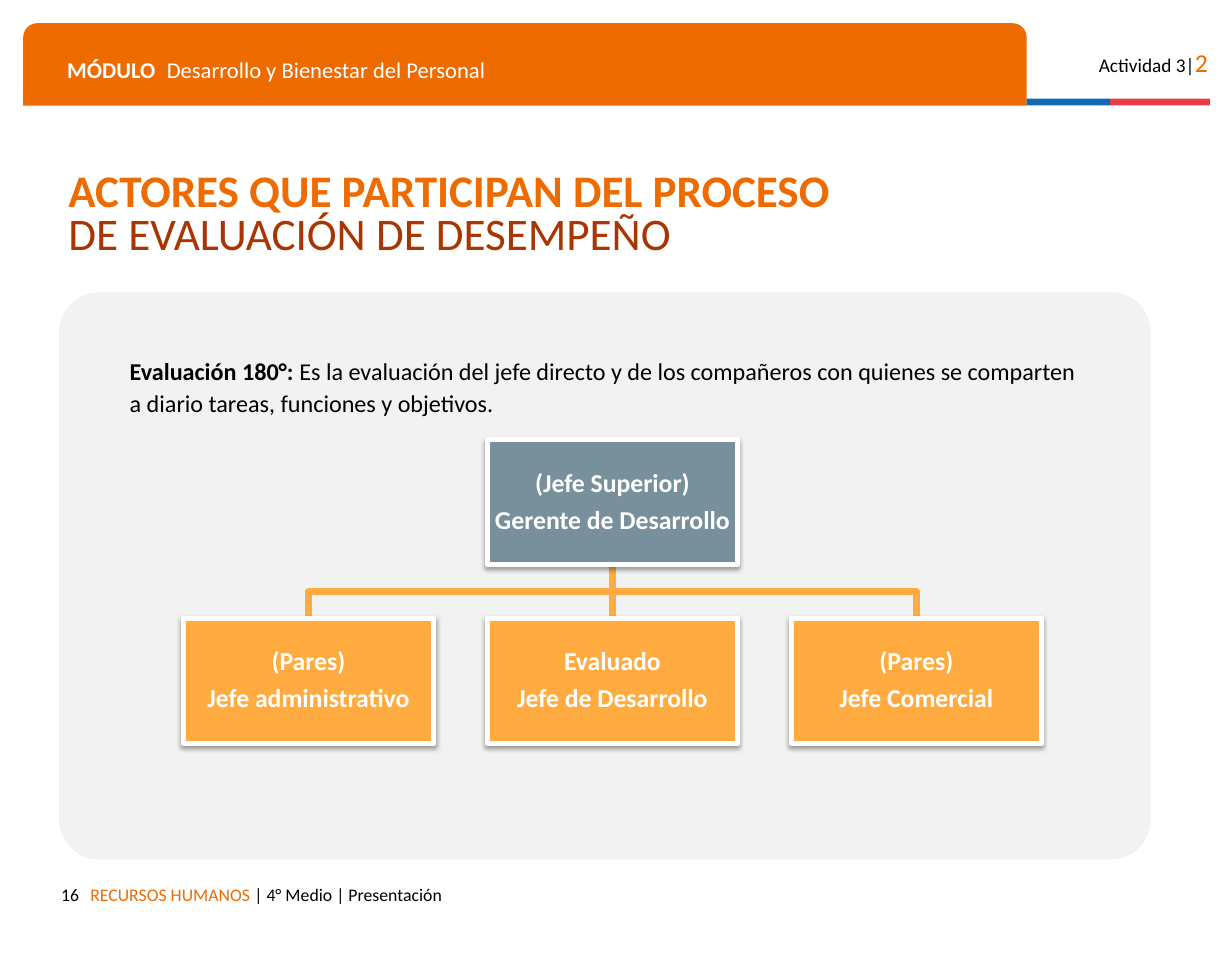
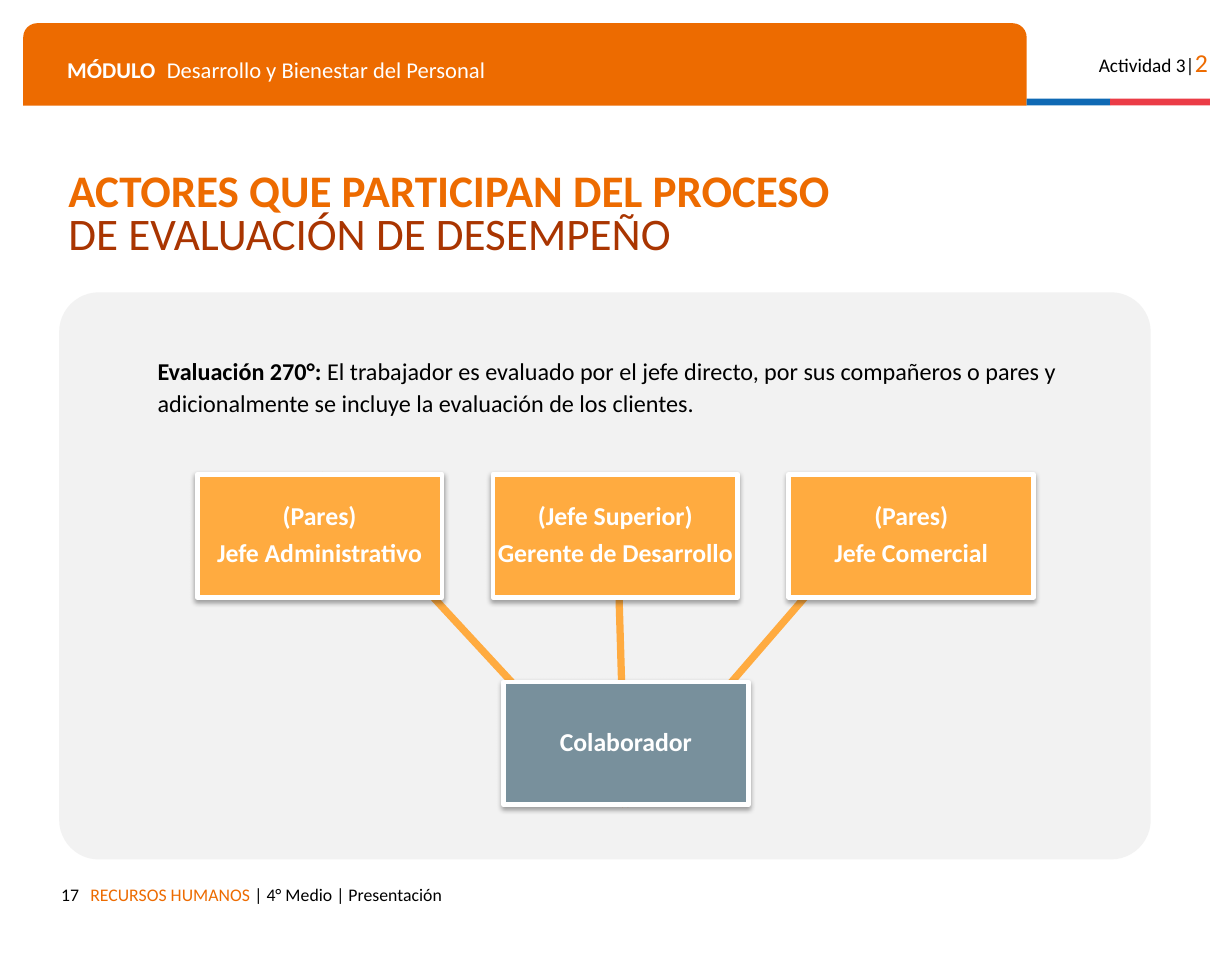
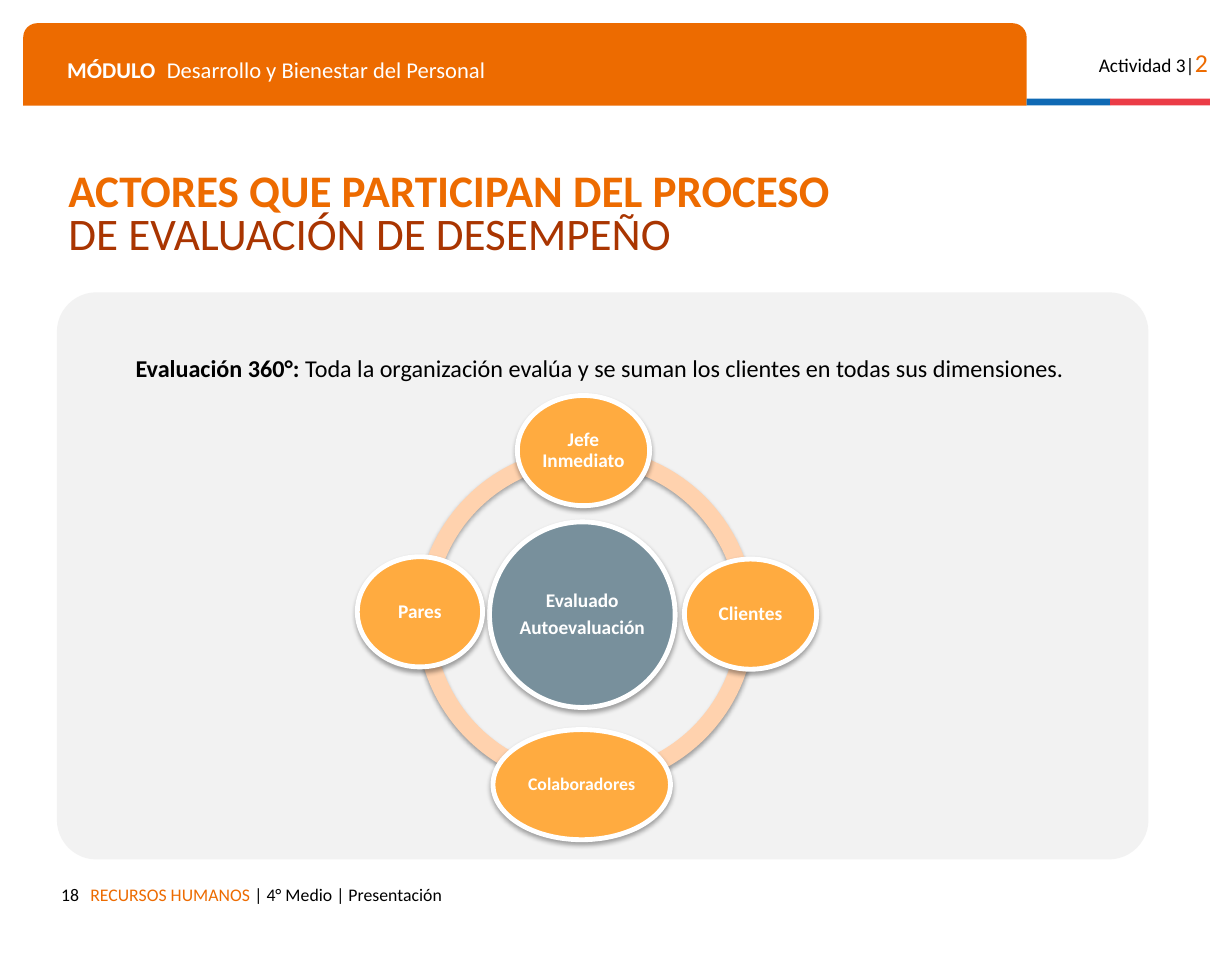
"""Build three slides on the actors of performance evaluation."""
from lxml import etree
from pptx import Presentation
from pptx.dml.color import RGBColor
from pptx.enum.shapes import MSO_CONNECTOR, MSO_SHAPE as SHAPE
from pptx.enum.text import MSO_ANCHOR as ANCHOR, MSO_AUTO_SIZE, PP_ALIGN as ALIGN
from pptx.oxml import parse_xml
from pptx.oxml.ns import nsdecls, qn
from pptx.util import Inches, Pt

ORANGE = RGBColor(0xED, 0x6B, 0x00)
RUST = RGBColor(0xA9, 0x35, 0x01)
BLUE = RGBColor(0x0F, 0x69, 0xB4)
RED = RGBColor(0xEB, 0x3C, 0x46)
GRAY = RGBColor(0xF2, 0xF2, 0xF2)
AMBER = RGBColor(0xFF, 0xAB, 0x40)
PEACH = RGBColor(0xFF, 0xD2, 0xAE)
SLATE = RGBColor(0x78, 0x90, 0x9C)
BLACK = RGBColor(0x00, 0x00, 0x00)
WHITE = RGBColor(0xFF, 0xFF, 0xFF)

SHADOW = (
    f'<a:effectLst {nsdecls("a")}><a:outerShdw blurRad="38100" dist="22860" dir="5400000"'
    ' rotWithShape="0"><a:srgbClr val="000000"><a:alpha val="35000"/></a:srgbClr>'
    "</a:outerShdw></a:effectLst>"
)
LABEL = {"alignment": ALIGN.CENTER, "line_spacing": 0.9}


def write_text(shape, paragraphs, paragraph_format, margin=0.1, anchor=ANCHOR.TOP, gap=0, grow=True):
    """Fill a shape with paragraphs, each a list of (text, size, colour, bold) runs."""
    frame = shape.text_frame
    frame_format = {
        "word_wrap": True,
        "vertical_anchor": anchor,
        "auto_size": MSO_AUTO_SIZE.SHAPE_TO_FIT_TEXT if grow else MSO_AUTO_SIZE.NONE,
    }
    for side in ("left", "top", "right", "bottom"):
        frame_format[f"margin_{side}"] = Inches(margin)
    for name, value in frame_format.items():
        setattr(frame, name, value)
    for index, runs in enumerate(paragraphs):
        paragraph = frame.add_paragraph() if index else frame.paragraphs[0]
        paragraph.space_before = Pt(gap if index else 0)
        for name, value in paragraph_format.items():
            setattr(paragraph, name, value)
        for text, size, color, bold in runs:
            run = paragraph.add_run()
            run.text = text
            run.font.color.rgb = color
            for name, value in {"name": "Calibri", "size": Pt(size), "bold": bold}.items():
                setattr(run.font, name, value)


def add_block(slide, kind, box, fill, adjustments=(), lines=(), size=16, gap=5.6, outlined=False, shadow=False):
    """Add a filled preset shape with optional centred label, white outline and shadow."""
    shape = slide.shapes.add_shape(kind, *map(Inches, box))
    shape.shadow.inherit = False
    shape.fill.solid()
    shape.fill.fore_color.rgb = fill
    for index, value in enumerate(adjustments):
        shape.adjustments[index] = value
    if outlined:
        shape.line.color.rgb = WHITE
        shape.line.width = Pt(3)
    else:
        shape.line.fill.background()
    if shadow:
        properties = shape.element.spPr
        properties.replace(properties.find(qn("a:effectLst")), parse_xml(SHADOW))
    if lines:
        runs = [[(line, size, WHITE, True)] for line in lines]
        write_text(shape, runs, LABEL, 0.01, ANCHOR.MIDDLE, gap, grow=False)
    return shape


presentation = Presentation()
presentation.slide_width = Inches(10.62)
presentation.slide_height = Inches(8.26)
layout = presentation.slide_layouts[5]
for placeholder in list(layout.placeholders):
    if placeholder.placeholder_format.idx:
        layout.shapes.element.remove(placeholder.element)
slides = [presentation.slides.add_slide(layout) for _ in range(3)]

shared_shapes = [
    add_block(slides[0], SHAPE.ROUND_2_SAME_RECTANGLE, (0.2, 0.2, 8.65, 0.71), ORANGE, (0.17, 0)),
    add_block(slides[0], SHAPE.RECTANGLE, (8.85, 0.85, 0.72, 0.06), BLUE),
    add_block(slides[0], SHAPE.RECTANGLE, (9.57, 0.85, 0.86, 0.06), RED),
]
shared_texts = [
    ((0.68, 7.53, 7.15, 0.35), ALIGN.LEFT,
     [("RECURSOS HUMANOS ", 11, ORANGE, False), ("| 4° Medio | Presentación", 11, BLACK, False)]),
    ((0.48, 0.38, 8.14, 0.41), ALIGN.LEFT,
     [("MÓDULO", 14, WHITE, True), ("\tDesarrollo y Bienestar del Personal", 14, WHITE, False)]),
    ((9.23, 0.3, 1.28, 0.43), ALIGN.RIGHT,
     [("Actividad 3|", 12, BLACK, False), ("2", 16, ORANGE, False)]),
]
for box, alignment, runs in shared_texts:
    text_box = slides[0].shapes.add_textbox(*map(Inches, box))
    write_text(text_box, [runs], {"alignment": alignment})
    if any("\t" in run[0] for run in runs):
        properties = text_box.text_frame.paragraphs[0]._p.get_or_add_pPr()
        tabs = etree.SubElement(properties, qn("a:tabLst"))
        etree.SubElement(tabs, qn("a:tab"), pos=str(Inches(0.86)), algn="l")
    shared_shapes.append(text_box)
for shape in shared_shapes:
    layout.shapes.element.append(shape.element)

definitions = [
    (0.51, (1.02, 2.95, 8.4, 0.74), "Evaluación 180°: ",
     "Es la evaluación del jefe directo y de los compañeros con quienes se comparten "
     "a diario tareas, funciones y objetivos."),
    (0.51, (1.26, 2.94, 9.21, 0.76), "Evaluación 270°: ",
     "El trabajador es evaluado por el jefe directo, por sus compañeros o pares y "
     "adicionalmente se incluye la evaluación de los clientes."),
    (0.49, (1.07, 2.92, 9.21, 0.48), "Evaluación 360°: ",
     "Toda la organización evalúa y se suman los clientes en todas sus dimensiones."),
]
title_lines = [
    [("ACTORES QUE PARTICIPAN DEL PROCESO", 28, ORANGE, True)],
    [("DE EVALUACIÓN DE DESEMPEÑO", 28, RUST, False)],
]
for number, (slide, definition) in enumerate(zip(slides, definitions), 16):
    panel_left, definition_box, term, meaning = definition
    title = slide.shapes.title
    title_place = {"left": 0.49, "top": 1.37, "width": 9.79, "height": 0.98}
    for name, value in title_place.items():
        setattr(title, name, Inches(value))
    write_text(title, title_lines, {"alignment": ALIGN.LEFT, "line_spacing": 0.8}, anchor=ANCHOR.MIDDLE)
    add_block(slide, SHAPE.ROUNDED_RECTANGLE, (panel_left, 2.52, 9.41, 4.89), GRAY, (0.07,))
    page_number = slide.shapes.add_textbox(*map(Inches, (0.41, 7.53, 0.37, 0.35)))
    write_text(page_number, [[(str(number), 11, BLACK, False)]], {"alignment": ALIGN.RIGHT})
    definition_text = slide.shapes.add_textbox(*map(Inches, definition_box))
    runs = [(term, 15, BLACK, True), (meaning, 15, BLACK, False)]
    write_text(definition_text, [runs], {"line_spacing": 1.1}, anchor=ANCHOR.MIDDLE)

tree_slide, fan_slide, ring_slide = slides

bracket_points = [(2.66, 5.33), (2.66, 5.1), (7.9, 5.1), (7.9, 5.33)]
corners = [(Inches(x), Inches(y)) for x, y in bracket_points]
builder = tree_slide.shapes.build_freeform(*corners[0])
builder.add_line_segments(corners[1:], close=False)
bracket = builder.convert_to_shape()
bracket.shadow.inherit = False
bracket.fill.background()
bracket.line.color.rgb = AMBER
bracket.line.width = Pt(4.5)

fan_left, fan_step, fan_width = 1.7, 2.55, 2.11
links = [(tree_slide, 5.28, 4.88, 5.28, 5.33)]
links += [
    (fan_slide, 5.39, 6.94, fan_left + column * fan_step + fan_width / 2, 4.09)
    for column in range(3)
]
for slide, *ends in links:
    link = slide.shapes.add_connector(MSO_CONNECTOR.STRAIGHT, *map(Inches, ends))
    link.line.color.rgb = AMBER
    link.line.width = Pt(4.5)
    etree.SubElement(link.element.spPr, qn("a:effectLst"))

raised = {"outlined": True, "shadow": True}
boss = ("(Jefe Superior)", "Gerente de Desarrollo")
commercial = ("(Pares)", "Jefe Comercial")
add_block(tree_slide, SHAPE.RECTANGLE, (4.2, 3.79, 2.16, 1.08), SLATE, lines=boss, **raised)
add_block(fan_slide, SHAPE.RECTANGLE, (4.34, 5.88, fan_width, 1.06), SLATE, lines=("Colaborador",), **raised)
rows = [
    (tree_slide, 1.58, 2.62, 5.33, 2.16, 1.08,
     [("(Pares)", "Jefe administrativo"), ("Evaluado", "Jefe de Desarrollo"), commercial]),
    (fan_slide, fan_left, fan_step, 4.09, fan_width, 1.06,
     [("(Pares)", "Jefe Administrativo"), boss, commercial]),
]
for slide, left, step, top, width, height, labels in rows:
    for column, lines in enumerate(labels):
        box = (left + column * step, top, width, height)
        add_block(slide, SHAPE.RECTANGLE, box, AMBER, lines=lines, **raised)

arcs = [(3.59, 109.16, 161.22), (3.59, 55.18, 109.22), (3.56, 215.4, 54.41), (3.56, 162, 215.43)]
for left, start, end in arcs:
    add_block(ring_slide, SHAPE.BLOCK_ARC, (left, 3.85, 2.95, 2.95), PEACH, (start, end, 0.05), shadow=True)

circles = [
    ((4.22, 4.5, 1.6, 1.6), SLATE, ("Evaluado", "Autoevaluación"), 12),
    ((4.46, 3.41, 1.14, 0.95), AMBER, ("Jefe Inmediato",), 12),
    ((5.9, 4.82, 1.14, 0.95), AMBER, ("Clientes",), 12),
    ((4.25, 6.29, 1.53, 0.95), AMBER, ("Colaboradores",), 11),
    ((3.08, 4.8, 1.08, 0.95), AMBER, ("Pares",), 12),
]
for box, fill, lines, size in circles:
    add_block(ring_slide, SHAPE.OVAL, box, fill, lines=lines, size=size, gap=4.2, **raised)

presentation.save("out.pptx")
